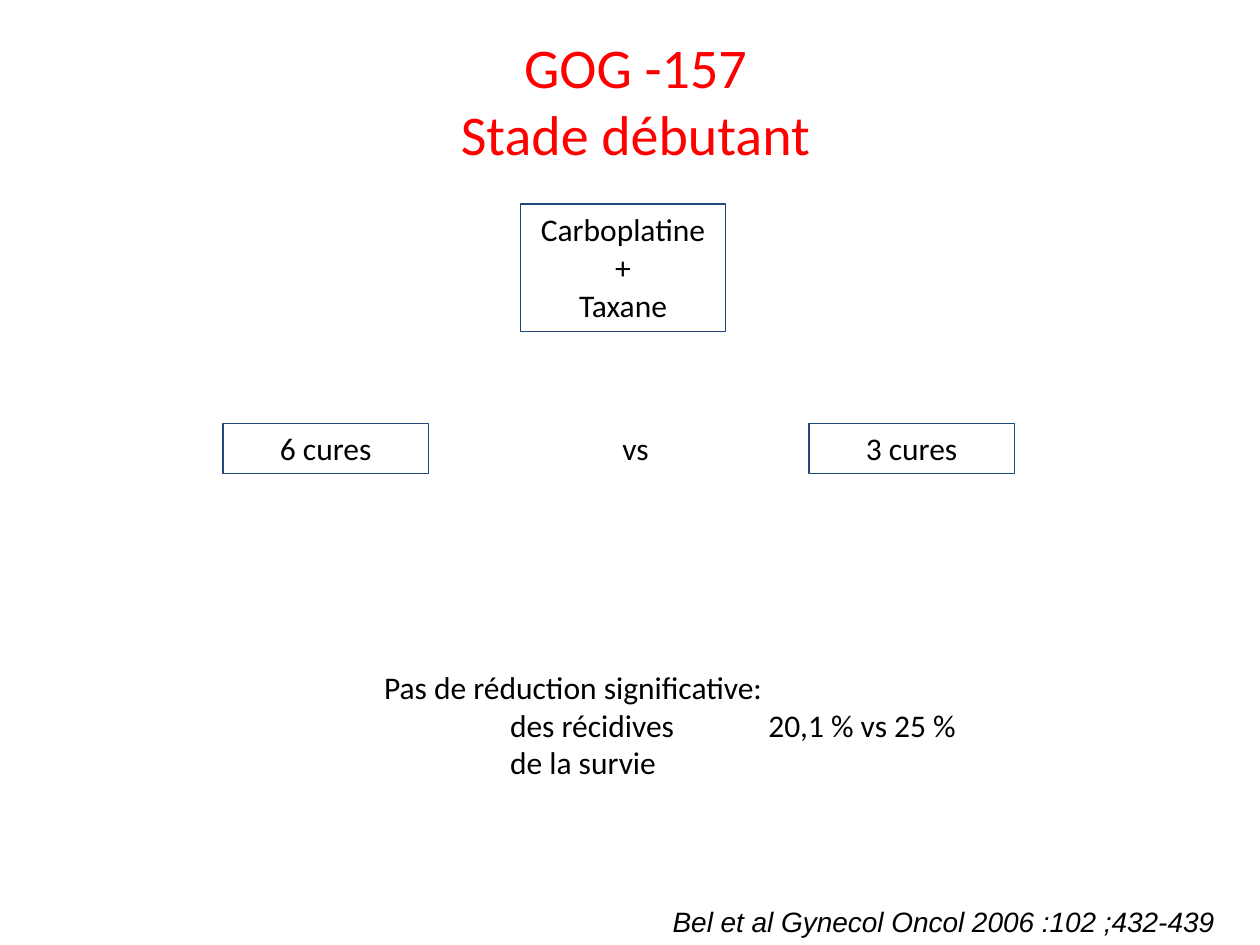
from dataclasses import dataclass

from lxml import etree
from pptx import Presentation
from pptx.dml.color import RGBColor
from pptx.enum.shapes import MSO_SHAPE
from pptx.enum.text import MSO_ANCHOR, MSO_AUTO_SIZE, PP_ALIGN
from pptx.oxml.ns import qn
from pptx.util import Emu, Inches, Pt

LEFT, CENTER = PP_ALIGN.LEFT, PP_ALIGN.CENTER
TOP, RECTANGLE = MSO_ANCHOR.TOP, MSO_SHAPE.RECTANGLE
NO_AUTOFIT = MSO_AUTO_SIZE.NONE
TITLE_ONLY = 5
COLUMNS, ROWS = 100, 75
CELL = Inches(0.1)


@dataclass(frozen=True)
class Theme:
    title: RGBColor = RGBColor(0xFF, 0x00, 0x00)
    text: RGBColor = RGBColor(0x00, 0x00, 0x00)
    border: RGBColor = RGBColor(0x1F, 0x49, 0x7D)
    body_font: str = "Calibri"
    citation_font: str = "Arial"
    title_size: int = 32
    body_size: int = 18
    citation_size: int = 16
    border_width: float = 0.75


@dataclass(frozen=True)
class Area:
    """A place on the slide, in grid columns and rows."""
    column: float
    row: float
    columns: float
    rows: float


@dataclass(frozen=True)
class TreatmentBox:
    area: Area
    lines: tuple[str, ...]


THEME = Theme()
BOX_COLUMNS, LINE_ROWS, ARM_ROW = 16.3, 4, 33.6
TREATMENTS = (
    TreatmentBox(Area(41.3, 16.2, BOX_COLUMNS, 10.1), ("Carboplatine", "+", "Taxane")),
    TreatmentBox(Area(17.7, ARM_ROW, BOX_COLUMNS, LINE_ROWS), ("6 cures",)),
    TreatmentBox(Area(64.2, ARM_ROW, BOX_COLUMNS, LINE_ROWS), ("3 cures",)),
)
RESULT_TABS = (10, 30.5)


def place(area: Area) -> tuple[Emu, ...]:
    """Turn grid units into left, top, width and height."""
    units = (area.column, area.row, area.columns, area.rows)
    return tuple(Emu(round(unit * CELL)) for unit in units)


def add_tab_stops(para, columns: tuple[float, ...]) -> None:
    tab_list = etree.SubElement(para._p.get_or_add_pPr(), qn("a:tabLst"))
    for column in columns:
        etree.SubElement(tab_list, qn("a:tab"), pos=str(round(column * CELL)), algn="l")


def write(box, lines: tuple[str, ...], *, size: int = THEME.body_size,
          color: RGBColor = THEME.text, font: str = THEME.body_font,
          align=LEFT, italic: bool = False, wrap: bool = True,
          tabs: tuple[float, ...] = ()) -> None:
    frame = box.text_frame
    frame.word_wrap = wrap
    frame.auto_size = NO_AUTOFIT
    frame.vertical_anchor = TOP
    for index, line in enumerate(lines):
        para = frame.add_paragraph() if index else frame.paragraphs[0]
        para.alignment = align
        if tabs:
            add_tab_stops(para, tabs)
        span = para.add_run()
        span.text = line
        span.font.name = font
        span.font.size = Pt(size)
        span.font.italic = italic
        span.font.color.rgb = color


def add_title(page, area: Area, lines: tuple[str, ...]) -> None:
    title = page.shapes.title
    title.left, title.top, title.width, title.height = place(area)
    write(title, lines, size=THEME.title_size, color=THEME.title, align=CENTER)


def add_treatment(page, treatment: TreatmentBox) -> None:
    box = page.shapes.add_shape(RECTANGLE, *place(treatment.area))
    box.shadow.inherit = False
    box.fill.background()
    box.line.color.rgb = THEME.border
    box.line.width = Pt(THEME.border_width)
    write(box, treatment.lines, align=CENTER)


def add_text(page, area: Area, *lines: str, **text_format) -> None:
    write(page.shapes.add_textbox(*place(area)), lines, wrap=False, **text_format)


def main() -> None:
    deck = Presentation()
    deck.slide_width, deck.slide_height = COLUMNS * CELL, ROWS * CELL
    page = deck.slides.add_slide(deck.slide_layouts[TITLE_ONLY])

    add_title(page, Area(8.3, 2.1, 84.3, 11.8), ("GOG -157", "Stade débutant"))
    for treatment in TREATMENTS:
        add_treatment(page, treatment)
    add_text(page, Area(48.4, ARM_ROW, 4.1, LINE_ROWS), "vs")
    add_text(page, Area(29.5, 52.5, 48, 10.1),
             "Pas de réduction significative:",
             "\tdes récidives\t20,1 % vs 25 %",
             "\tde la survie", tabs=RESULT_TABS)
    add_text(page, Area(52.4, 71.3, 45.5, 3.7),
             "Bel et al Gynecol Oncol 2006 :102 ;432-439",
             size=THEME.citation_size, font=THEME.citation_font, italic=True)
    deck.save("out.pptx")


if __name__ == "__main__":
    main()
